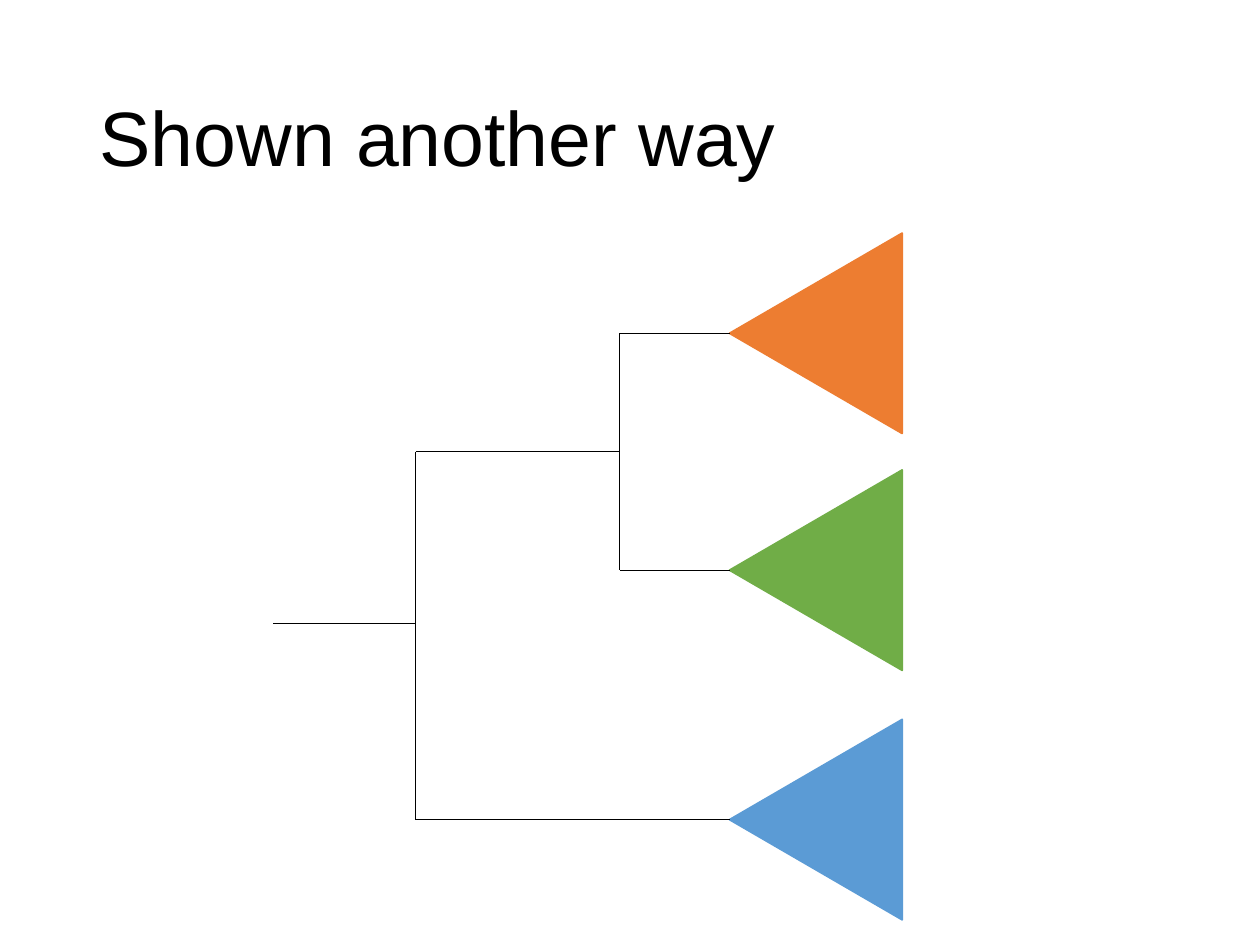
from lxml.etree import SubElement
from pptx import Presentation
from pptx.dml.color import RGBColor
from pptx.enum.shapes import MSO_CONNECTOR, MSO_SHAPE
from pptx.enum.text import MSO_ANCHOR, PP_ALIGN
from pptx.oxml.ns import qn
from pptx.util import Inches, Pt

BLACK = RGBColor(0x00, 0x00, 0x00)
ORANGE = RGBColor(0xED, 0x7D, 0x31)
GREEN = RGBColor(0x70, 0xAD, 0x47)
BLUE = RGBColor(0x5B, 0x9B, 0xD5)

CLADE_WIDTH, CLADE_HEIGHT = 1.37, 1.59


def write_text(shape, text, font="Arial", size=44, color=BLACK,
               align=PP_ALIGN.LEFT, anchor=MSO_ANCHOR.MIDDLE, spacing=0.9):
    frame = shape.text_frame
    frame.word_wrap = True
    frame.vertical_anchor = anchor
    paragraph = frame.paragraphs[0]
    paragraph.alignment = align
    paragraph.line_spacing = spacing
    run = paragraph.add_run()
    run.text = text
    run.font.name = font
    run.font.size = Pt(size)
    run.font.color.rgb = color


def add_branch(slide, start_x, start_y, end_x, end_y):
    branch = slide.shapes.add_connector(
        MSO_CONNECTOR.STRAIGHT,
        Inches(start_x), Inches(start_y), Inches(end_x), Inches(end_y))
    branch.line.color.rgb = BLACK
    branch.line.width = Pt(0.5)
    SubElement(branch._element.spPr, qn("a:effectLst"))


def add_clade(slide, tip_x, tip_y, color):
    """Place a triangle whose tip points left at the given point."""
    # The frame is given before the quarter turn, around the same centre
    left = tip_x + (CLADE_WIDTH - CLADE_HEIGHT) / 2
    top = tip_y - CLADE_WIDTH / 2
    clade = slide.shapes.add_shape(
        MSO_SHAPE.ISOSCELES_TRIANGLE, Inches(left), Inches(top),
        Inches(CLADE_HEIGHT), Inches(CLADE_WIDTH))
    clade.rotation = 270
    clade.shadow.inherit = False
    clade.fill.solid()
    clade.fill.fore_color.rgb = color
    clade.line.color.rgb = color
    clade.line.width = Pt(1)


def add_title(slide, left, top, width, height):
    title = slide.shapes.title
    title.left, title.top = Inches(left), Inches(top)
    title.width, title.height = Inches(width), Inches(height)
    write_text(title, "Shown another way")


def add_tree(slide, left, top, width, height):
    # Columns: root, first split, second split, clade tips
    root_x, first_x, second_x = left, left + 1.13, left + 2.75
    tip_x = left + width - CLADE_WIDTH
    # Rows: one for each clade, the middle one set by its distance to the first
    orange_y = top + CLADE_HEIGHT / 2
    green_y = orange_y + 1.88
    blue_y = top + height - CLADE_HEIGHT / 2
    pair_y = (orange_y + green_y) / 2
    root_y = top + 3.1

    # Clades
    for tip_y, color in ((orange_y, ORANGE), (green_y, GREEN), (blue_y, BLUE)):
        add_clade(slide, tip_x, tip_y, color)

    # Each fork: stem start, split column, stem row, and its two arms
    forks = (
        (first_x, second_x, pair_y, ((orange_y, tip_x), (green_y, tip_x))),
        (root_x, first_x, root_y, ((pair_y, first_x), (blue_y, tip_x))),
    )
    for stem_x, split_x, stem_y, arms in forks:
        (upper_y, _), (lower_y, _) = arms
        add_branch(slide, stem_x, stem_y, split_x, stem_y)
        add_branch(slide, split_x, upper_y, split_x, lower_y)
        for arm_y, end_x in arms:
            if end_x > split_x:
                add_branch(slide, split_x, arm_y, end_x, arm_y)


def main():
    presentation = Presentation()
    presentation.slide_width = Inches(10)
    presentation.slide_height = Inches(7.5)
    slide = presentation.slides.add_slide(presentation.slide_layouts[5])
    add_tree(slide, 2.17, 1.85, 4.99, 5.45)
    add_title(slide, 0.69, 0.4, 8.62, 1.45)
    presentation.save("out.pptx")


if __name__ == "__main__":
    main()
